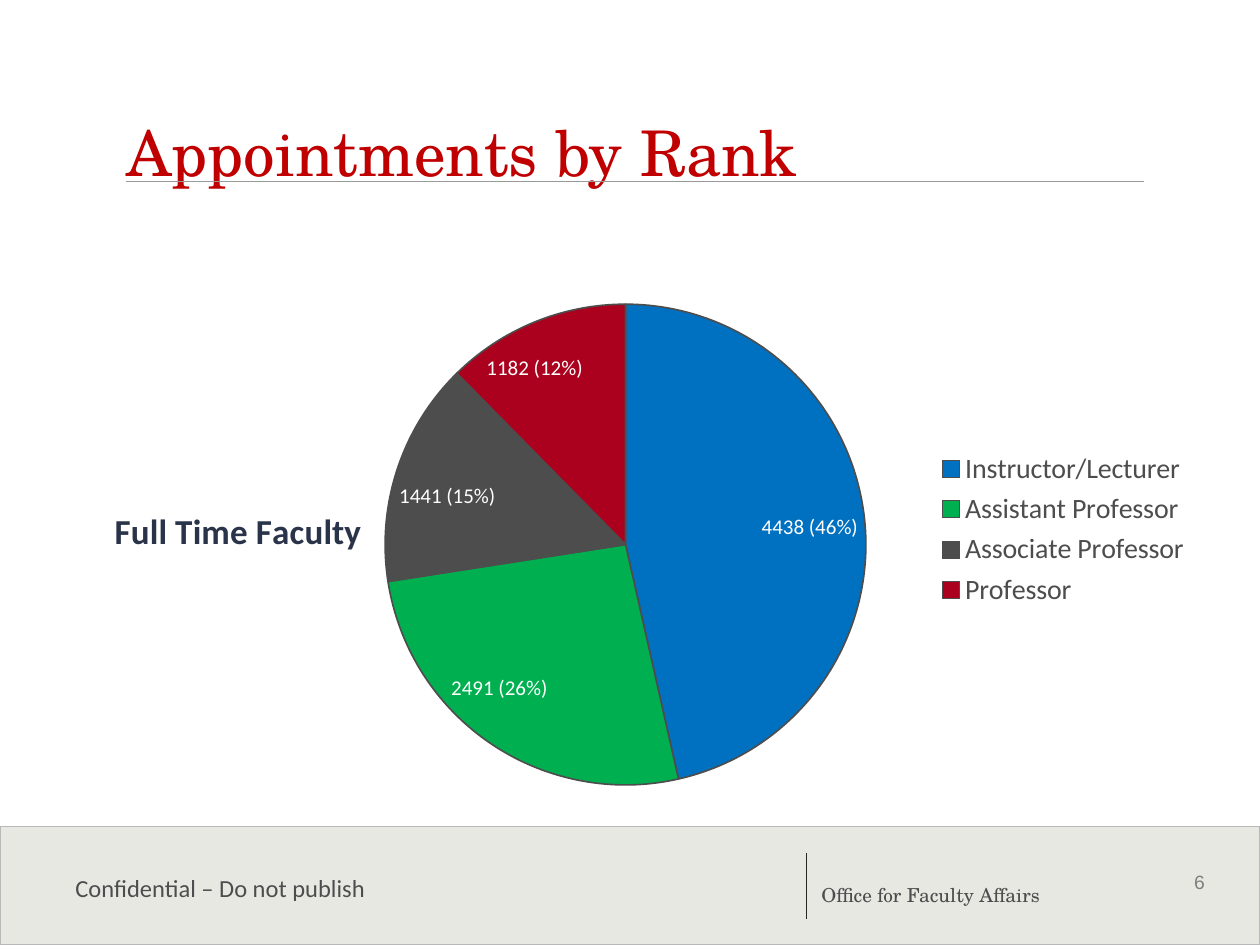
from lxml.etree import SubElement
from pptx import Presentation
from pptx.chart.data import CategoryChartData
from pptx.dml.color import RGBColor
from pptx.enum.chart import XL_CHART_TYPE, XL_LABEL_POSITION as LabelPosition, XL_LEGEND_POSITION as LegendPosition
from pptx.enum.shapes import MSO_CONNECTOR, MSO_SHAPE
from pptx.enum.text import MSO_ANCHOR as Anchor, PP_ALIGN
from pptx.oxml import parse_xml
from pptx.oxml.ns import nsdecls, qn
from pptx.util import Inches, Pt

TITLE = "Appointments by Rank"
CHART_TITLE = "Full Time Faculty"
RANKS = [
    ("Instructor/Lecturer", 4438, "0070C0"),
    ("Assistant Professor", 2491, "00B050"),
    ("Associate Professor", 1441, "4D4D4D"),
    ("Professor", 1182, "AB011E"),
]
FOOTER_TEXTS = [
    ("6", (9.38, 6.86, 0.5, 0.37), "Arial", 11, "7F7F7F", Anchor.TOP),
    ("Office for Faculty Affairs", (6.42, 6.77, 2.8, 0.47), "TeX Gyre Schola", 11, "4D4D4D", Anchor.BOTTOM),
    ("Confidential – Do not publish", (0.5, 6.88, 2.67, 0.34), "Calibri", 14, "4D4D4D", Anchor.TOP),
]
RULES = [((6.4, 6.77), (6.4, 7.29), "262626"), ((1, 1.44), (9.08, 1.44), "999999")]


def color(value):
    return RGBColor.from_string(value)


def style(font, name, size, value, bold=False):
    font.name, font.size, font.bold = name, Pt(size), bold
    font.color.rgb = color(value)


def outline(line, value, width=0.75):
    line.color.rgb = color(value)
    line.width = Pt(width)


def place(parent, **fractions):
    layout = parent.find(qn("c:layout"))
    if layout is None:
        layout = parse_xml(f"<c:layout {nsdecls('c')}/>")
        parent.insert_element_before(layout, "c:overlay", "c:spPr", "c:txPr") if parent.tag != qn("c:plotArea") else parent.insert(0, layout)
    for child in list(layout):
        layout.remove(child)
    manual = SubElement(layout, qn("c:manualLayout"))
    if parent.tag == qn("c:plotArea"):
        SubElement(manual, qn("c:layoutTarget")).set("val", "inner")
    for axis in "xy":
        SubElement(manual, qn(f"c:{axis}Mode")).set("val", "edge")
    for key, value in fractions.items():
        SubElement(manual, qn(f"c:{key}")).set("val", str(value))


prs = Presentation()
prs.slide_width, prs.slide_height = Inches(10), Inches(7.5)
slide = prs.slides.add_slide(prs.slide_layouts[5])
shapes = slide.shapes

band = shapes.add_shape(MSO_SHAPE.RECTANGLE, Inches(0), Inches(6.56), Inches(10), Inches(0.94))
band.shadow.inherit = False
band.fill.solid()
band.fill.fore_color.rgb = color("D3D3C9")
SubElement(band.fill._xPr.find(".//" + qn("a:srgbClr")), qn("a:alpha")).set("val", "50000")
outline(band.line, "B8B8B8")

for start, end, value in RULES:
    rule = shapes.add_connector(MSO_CONNECTOR.STRAIGHT, *map(Inches, start + end))
    outline(rule.line, value)
    SubElement(rule._element.spPr, qn("a:effectLst"))

heading = shapes.title
heading.left, heading.top, heading.width, heading.height = map(Inches, (1, 0.3, 8.08, 1.25))
heading.text_frame.text = TITLE
heading.text_frame.margin_left = 0
heading.text_frame.vertical_anchor = Anchor.BOTTOM
heading.text_frame.paragraphs[0].alignment = PP_ALIGN.LEFT
style(heading.text_frame.paragraphs[0].runs[0].font, "TeX Gyre Schola", 36, "C00000")

for text, box, name, size, value, anchor in FOOTER_TEXTS:
    frame = shapes.add_textbox(*map(Inches, box)).text_frame
    frame.word_wrap = True
    frame.vertical_anchor = anchor
    frame.text = text
    style(frame.paragraphs[0].runs[0].font, name, size, value)

data = CategoryChartData()
data.categories = [rank for rank, _, _ in RANKS]
data.add_series("Series 1", [count for _, count, _ in RANKS])
chart = shapes.add_chart(XL_CHART_TYPE.PIE, *map(Inches, (0.5, 1.58, 9.02, 4.77)), data).chart
style(chart.font, "DejaVu Sans", 19, "4D4D4D", True)

chart.has_title = True
chart.chart_title.text_frame.text = CHART_TITLE
style(chart.chart_title.text_frame.paragraphs[0].runs[0].font, "Calibri", 20, "293349", True)
chart.has_legend = True
chart.legend.position = LegendPosition.RIGHT
chart.legend.include_in_layout = False
style(chart.legend.font, "Calibri", 16, "4D4D4D")

place(chart.chart_title._element, x=0.04, y=0.5)
place(chart.legend._element, x=0.76, y=0.41, w=0.24, h=0.28)
place(chart._chartSpace.chart.plotArea, x=0.28, y=0.175, w=0.43, h=0.8)

pie = chart.plots[0]
pie.vary_by_categories = True
for point_index, (_, _, value) in enumerate(RANKS):
    slice_format = pie.series[0].points[point_index].format
    slice_format.fill.solid()
    slice_format.fill.fore_color.rgb = color(value)
    outline(slice_format.line, "4D4D4D", 0.94)

labels = pie.series[0].data_labels
labels.show_value = labels.show_percentage = True
labels.show_legend_key = False
labels.number_format = "\\(0%\\)"
labels.number_format_is_linked = False
labels.position = LabelPosition.BEST_FIT
style(labels.font, "Calibri", 12, "FFFFFF")
separator = parse_xml(f"<c:separator {nsdecls('c')}> </c:separator>")
labels._element.find(qn("c:showBubbleSize")).addnext(separator)

prs.save("out.pptx")
